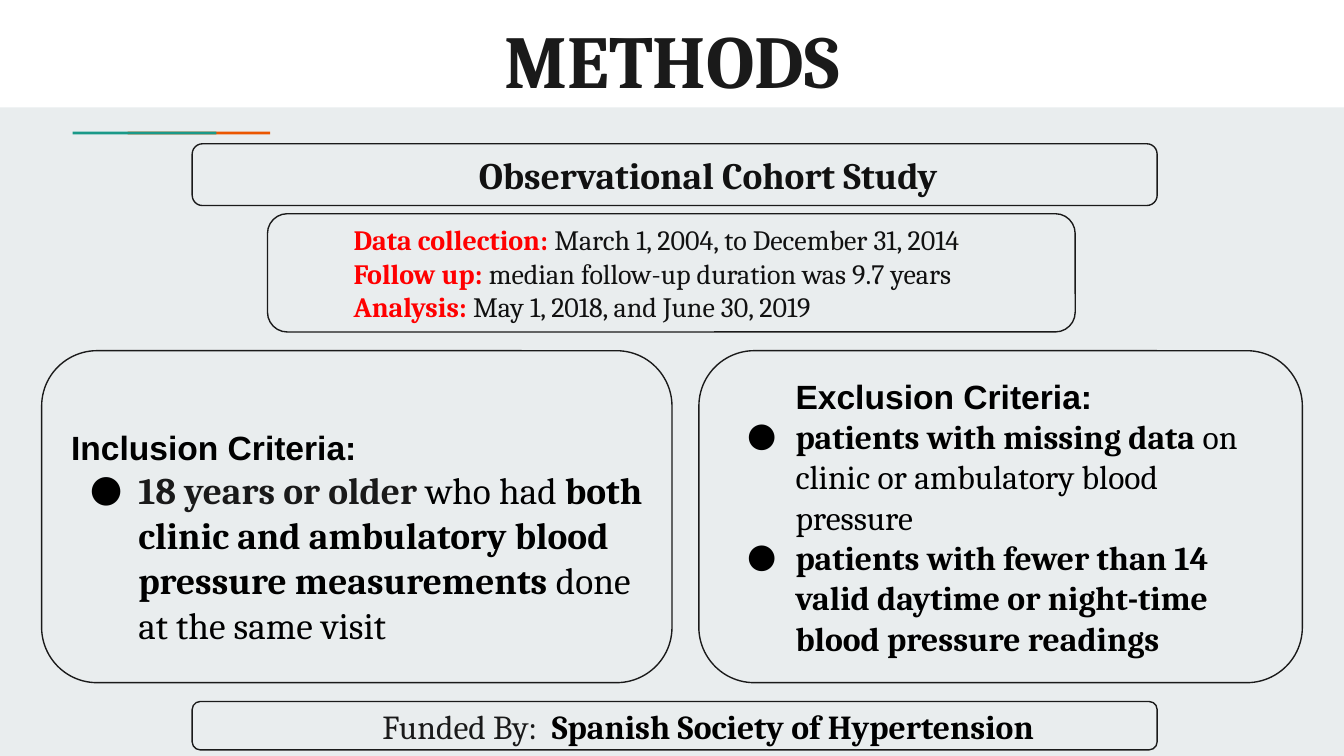
from lxml import etree
from pptx import Presentation, util as u
from pptx.dml.color import RGBColor
from pptx.enum import shapes, text
from pptx.oxml.ns import qn

WHITE = RGBColor(0xFF, 0xFF, 0xFF)
PALE = RGBColor(0xE9, 0xED, 0xEE)
BLACK = RGBColor(0, 0, 0)
INK = RGBColor(0x1A, 0x1A, 0x1A)
DARK = RGBColor(0x11, 0x11, 0x11)
RED = RGBColor(0xFF, 0, 0)
ORANGE = RGBColor(0xEB, 0x56, 0x00)
TEAL = RGBColor(0x1A, 0x99, 0x88)

W = 10
H = W * 9 / 16
SERIF, SANS = "Cambria", "Arial"
INSET, INDENT, HANG = 0.1, 0.5, 0.36
LEFT, CENTER = text.PP_ALIGN.LEFT, text.PP_ALIGN.CENTER


def inches(box):
    return [u.Inches(v) for v in box]


def add_bar(s, box, color):
    sp = s.shapes.add_shape(shapes.MSO_SHAPE.RECTANGLE, *inches(box))
    sp.shadow.inherit = False
    sp.fill.solid()
    sp.fill.fore_color.rgb = color
    sp.line.fill.background()


def set_frame(sp, top=INSET):
    tf = sp.text_frame
    tf.word_wrap = True
    tf.vertical_anchor = text.MSO_ANCHOR.MIDDLE
    tf.margin_left = tf.margin_right = tf.margin_bottom = u.Inches(INSET)
    tf.margin_top = u.Inches(top)
    return tf


def add_panel(s, box, top=INSET):
    """Outlined rounded box; returns its text frame."""
    sp = s.shapes.add_shape(shapes.MSO_SHAPE.ROUNDED_RECTANGLE, *inches(box))
    sp.adjustments[0] = 0.167
    sp.shadow.inherit = False
    sp.fill.solid()
    sp.fill.fore_color.rgb = PALE
    sp.line.color.rgb = INK
    sp.line.width = u.Pt(0.75)
    return set_frame(sp, top)


def add_para(tf, runs, size, align=LEFT, indent=0, bullet=False, font=SERIF):
    """Runs are (words, colour, bold)."""
    first = tf.paragraphs[0]
    p = tf.add_paragraph() if first.runs else first
    p.alignment = align
    ppr = p._p.get_or_add_pPr()
    ppr.set("marL", str(u.Inches(indent)))
    ppr.set("indent", str(u.Inches(-HANG) if bullet else 0))
    if bullet:
        clr = etree.SubElement(ppr, qn("a:buClr"))
        etree.SubElement(clr, qn("a:srgbClr")).set("val", str(BLACK))
        etree.SubElement(ppr, qn("a:buFont")).set("typeface", font)
        etree.SubElement(ppr, qn("a:buChar")).set("char", "●")
    for words, color, bold in runs:
        r = p.add_run()
        r.text = words
        r.font.name, r.font.size = font, u.Pt(size)
        r.font.bold = bold
        r.font.color.rgb = color


def add_header(s, box):
    x, y, w, h = box
    add_bar(s, box, WHITE)
    # Two-tone accent line below the band
    add_bar(s, (x + 0.095 * w, h + 0.18, 1.06, 0.02), ORANGE)
    add_bar(s, (x + 0.054 * w, h + 0.18, 1.07, 0.02), TEAL)
    sp = s.shapes.add_textbox(*inches((x + 0.08 * w, y, 0.84 * w, h + 0.07)))
    add_para(set_frame(sp), [("METHODS", INK, True)], 40, CENTER)


def add_banner(s, box, runs, size):
    add_para(add_panel(s, box), runs, size, CENTER, INDENT)


def add_timeline(s, box):
    tf = add_panel(s, box)
    for label, detail in (
        ("Data collection: ", "March 1, 2004, to December 31, 2014"),
        ("Follow up: ", "median follow-up duration was 9.7 years"),
        ("Analysis: ", "May 1, 2018, and June 30, 2019"),
    ):
        add_para(tf, [(label, RED, True), (detail, DARK, False)], 15, indent=INDENT)


def add_criteria(s, box, heading, items, size, indent=0, top=INSET):
    tf = add_panel(s, box, top)
    add_para(tf, [(heading, BLACK, True)], 18, indent=indent, font=SANS)
    for runs in items:
        add_para(tf, runs, size, indent=INDENT, bullet=True)


def main():
    prs = Presentation()
    prs.slide_width, prs.slide_height = u.Inches(W), u.Inches(H)
    s = prs.slides.add_slide(prs.slide_layouts[6])
    s.background.fill.solid()
    s.background.fill.fore_color.rgb = PALE

    add_header(s, (0, 0, W, 0.8))

    # Study design and dates
    add_banner(s, (1.43, 1.07, 7.18, 0.46),
               [("Observational Cohort Study", DARK, True)], 20)
    add_timeline(s, (1.99, 1.59, 6.01, 0.88))

    # Criteria side by side
    add_criteria(s, (0.31, 2.61, 4.69, 2.47), "Inclusion Criteria:", [
        [("18 years or older ", INK, True), ("who had ", BLACK, False),
         ("both clinic and ambulatory blood pressure measurements", BLACK, True),
         (" done at the same visit", BLACK, False)],
    ], 20, top=0.4)
    add_criteria(s, (5.2, 2.61, 4.49, 2.47), "Exclusion Criteria:", [
        [("patients with missing data", BLACK, True),
         (" on clinic or ambulatory blood pressure", BLACK, False)],
        [("patients with fewer than 14 valid daytime or night-time "
          "blood pressure readings", BLACK, True)],
    ], 18, INDENT)

    # Funding
    add_banner(s, (1.43, 5.22, 7.18, 0.36),
               [("Funded By:  ", INK, False),
                ("Spanish Society of Hypertension", BLACK, True)], 18)

    prs.save("out.pptx")


if __name__ == "__main__":
    main()
